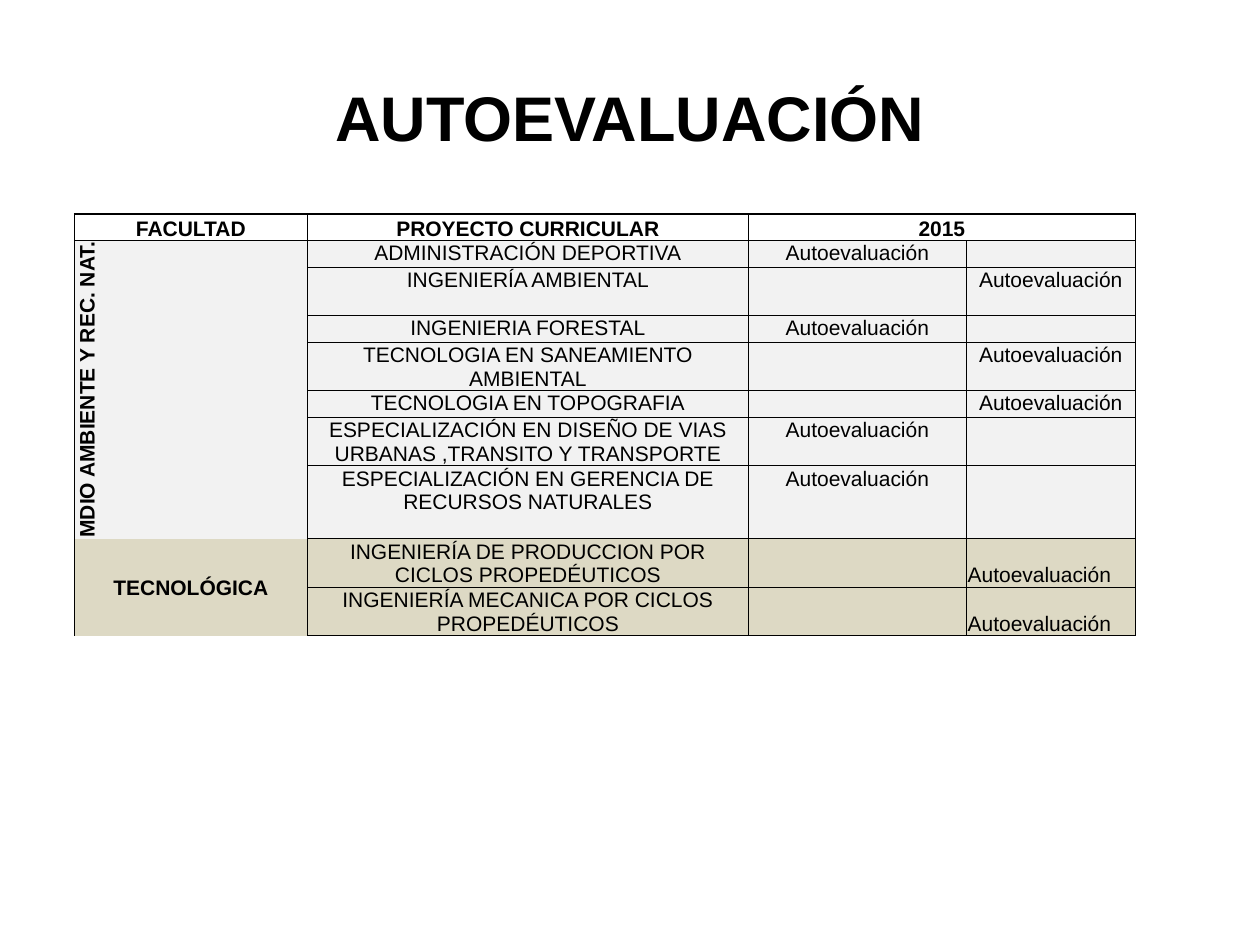
from dataclasses import dataclass

from lxml.etree import SubElement
from pptx import Presentation
from pptx.dml.color import RGBColor
from pptx.enum.text import MSO_ANCHOR as Anchor, PP_ALIGN as Align
from pptx.oxml.ns import qn
from pptx.util import Inches, Pt


@dataclass(frozen=True)
class Theme:
    """Colours, font and type sizes of the slide."""
    font: str = "Arial"
    title_size: int = 36
    table_size: int = 12
    ink: str = "000000"
    environment: str = "F2F2F2"
    technology: str = "DDD9C4"


THEME = Theme()
STATUS = "Autoevaluación"
COLUMN_WIDTHS = (1.85, 3.5, 1.73, 1.34)
HEADINGS = ("FACULTAD", "PROYECTO CURRICULAR", "2015")
SINGLE, DOUBLE, TRIPLE = 0.21, 0.38, 0.58
FACULTIES = (
    ("MDIO AMBIENTE Y REC. NAT.", THEME.environment, (
        ("ADMINISTRACIÓN DEPORTIVA", 2, SINGLE),
        ("INGENIERÍA AMBIENTAL", 3, DOUBLE),
        ("INGENIERIA FORESTAL", 2, SINGLE),
        ("TECNOLOGIA EN SANEAMIENTO AMBIENTAL", 3, DOUBLE),
        ("TECNOLOGIA EN TOPOGRAFIA", 3, SINGLE),
        ("ESPECIALIZACIÓN EN DISEÑO DE VIAS URBANAS ,TRANSITO Y TRANSPORTE", 2, DOUBLE),
        ("ESPECIALIZACIÓN EN GERENCIA DE RECURSOS NATURALES", 2, TRIPLE),
    )),
    ("TECNOLÓGICA", THEME.technology, (
        ("INGENIERÍA DE PRODUCCION POR CICLOS PROPEDÉUTICOS", 3, DOUBLE),
        ("INGENIERÍA MECANICA POR CICLOS PROPEDÉUTICOS", 3, DOUBLE),
    )),
)


def write(paragraph, text, size, bold=False, align=Align.CENTER):
    """Add one themed run to a paragraph."""
    paragraph.alignment = align
    run = paragraph.add_run()
    run.text = text
    run.font.name = THEME.font
    run.font.size = Pt(size)
    run.font.bold = bold
    run.font.color.rgb = RGBColor.from_string(THEME.ink)


def draw_borders(cell, widths):
    """Draw the cell edges named in widths and clear the others."""
    properties = cell._tc.get_or_add_tcPr()
    for side in "LRTB":
        width = widths.get(side)
        line = SubElement(properties, qn(f"a:ln{side}"), w=str(Pt(width or 0)))
        if width:
            fill = SubElement(line, qn("a:solidFill"))
            SubElement(fill, qn("a:srgbClr"), val=THEME.ink)
        else:
            SubElement(line, qn("a:noFill"))


def style_cell(cell, borders, color=None):
    """Set margins, borders, fill and empty-text size of a cell."""
    cell.margin_left = cell.margin_right = cell.margin_top = Inches(0.01)
    cell.margin_bottom = 0
    draw_borders(cell, borders)
    if color:
        cell.fill.solid()
        cell.fill.fore_color.rgb = RGBColor.from_string(color)
    else:
        cell.fill.background()
    paragraph = cell.text_frame.paragraphs[0]
    SubElement(paragraph._p, qn("a:endParaRPr"), sz=str(THEME.table_size * 100))


def fill_cell(cell, text, anchor, bold=False, align=Align.CENTER):
    """Write the text of a table cell."""
    cell.vertical_anchor = anchor
    write(cell.text_frame.paragraphs[0], text, THEME.table_size, bold, align)


def add_title(slide, left, top, width, height):
    """Place and format the slide title."""
    title = slide.shapes.title
    title.left, title.top, title.width, title.height = left, top, width, height
    frame = title.text_frame
    frame.margin_left = frame.margin_right = frame.margin_top = frame.margin_bottom = 0
    frame.vertical_anchor = Anchor.MIDDLE
    write(frame.paragraphs[0], "AUTOEVALUACIÓN", THEME.title_size, bold=True)


def add_header(table):
    """Fill the heading row, with the year over two columns."""
    for column in range(len(COLUMN_WIDTHS)):
        edges = {"L": 0.5, "R": 0.5, "T": 1, "B": 0.5}
        style_cell(table.cell(0, column), edges)
    table.cell(0, 2).merge(table.cell(0, 3))
    for column, heading in enumerate(HEADINGS):
        fill_cell(table.cell(0, column), heading, Anchor.BOTTOM, bold=True)


def add_faculty(table, first, name, color, projects):
    """Fill the rows of one faculty, starting at row first."""
    is_technology = color == THEME.technology
    last = first + len(projects) - 1
    for row, (project, status_column, height) in enumerate(projects, first):
        table.rows[row].height = Inches(height)
        faculty_edges = {"L": 1, "R": 0.5}
        if row == 1:
            faculty_edges["T"] = 0.5
        if row == len(table.rows) - 1:
            faculty_edges["B"] = 0.5
        style_cell(table.cell(row, 0), faculty_edges, color)
        for column in range(1, len(COLUMN_WIDTHS)):
            style_cell(table.cell(row, column), dict.fromkeys("LRTB", 0.5), color)
        fill_cell(table.cell(row, 1), project, Anchor.MIDDLE if is_technology else Anchor.TOP)
        fill_cell(table.cell(row, status_column), STATUS,
                  Anchor.BOTTOM if is_technology else Anchor.TOP,
                  align=Align.LEFT if is_technology else Align.CENTER)
    faculty = table.cell(first, 0)
    faculty.merge(table.cell(last, 0))
    fill_cell(faculty, name, Anchor.MIDDLE, bold=True)
    if not is_technology:
        faculty._tc.get_or_add_tcPr().set("vert", "vert270")


def add_schedule(slide, left, top, width, height):
    """Build the table of self-evaluations by faculty."""
    row_count = 1 + sum(len(projects) for _, _, projects in FACULTIES)
    table = slide.shapes.add_table(
        row_count, len(COLUMN_WIDTHS), left, top, width, height).table
    table.first_row = table.horz_banding = False
    for column, column_width in zip(table.columns, COLUMN_WIDTHS):
        column.width = Inches(column_width)
    table.rows[0].height = Inches(SINGLE)
    add_header(table)
    first = 1
    for name, color, projects in FACULTIES:
        add_faculty(table, first, name, color, projects)
        first += len(projects)


def main():
    """Build and save the presentation."""
    deck = Presentation()
    deck.slide_width, deck.slide_height = Inches(10), Inches(7.5)
    slide = deck.slides.add_slide(deck.slide_layouts[5])
    add_title(slide, Inches(0.5), Inches(0.3), Inches(9), Inches(1.25))
    add_schedule(slide, Inches(0.59), Inches(1.7), Inches(8.42), Inches(3.3))
    deck.save("out.pptx")


if __name__ == "__main__":
    main()
